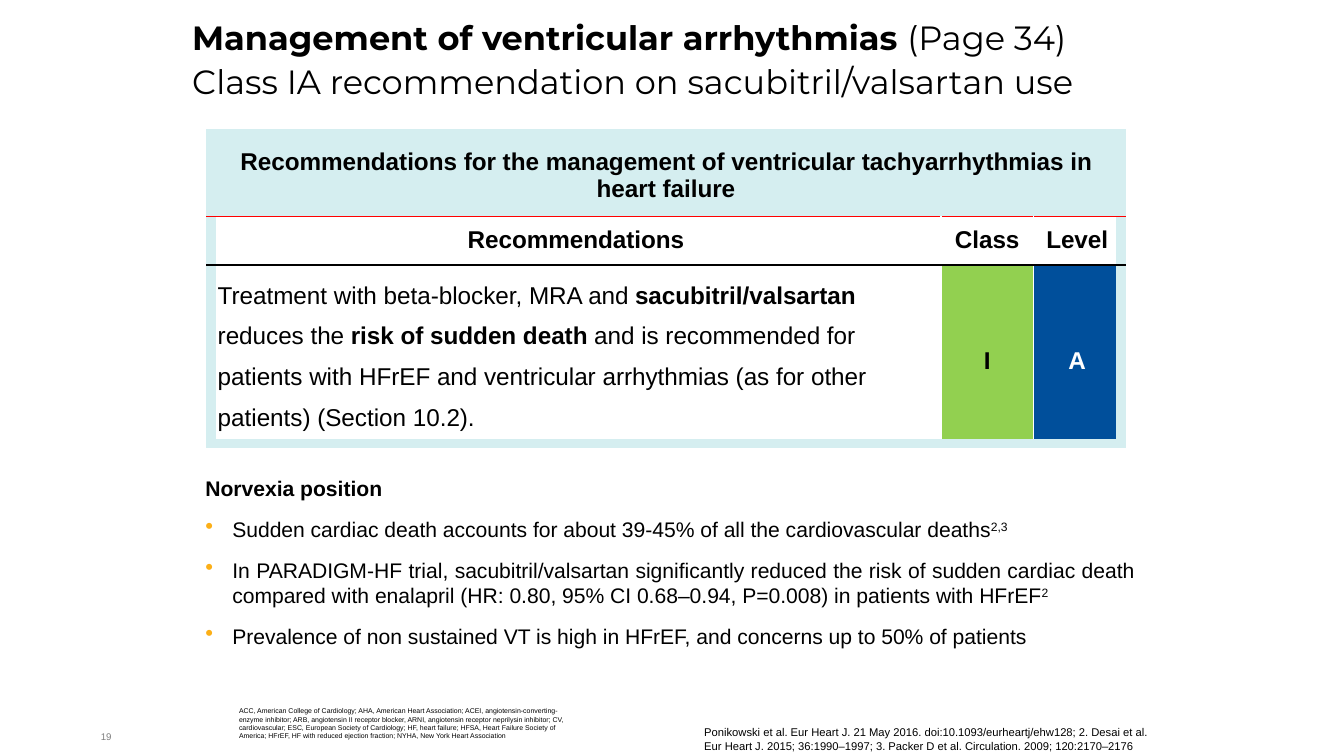
from lxml import etree
from pptx import Presentation, util as u
from pptx.dml.color import RGBColor
from pptx.enum import text
from pptx.oxml import ns

In, Pt = u.Inches, u.Pt
THEME = {
    "black": "000000", "white": "FFFFFF", "grey": "7F7F7F", "red": "FF0000",
    "frame": "D5EEF0", "class": "92D050", "level": "004F9B", "bullet": "FCAF17",
    "head": "Montserrat", "body": "Arial",
    "title_pt": 18, "table_pt": 13, "position_pt": 11.25,
    "source_pt": 6, "number_pt": 5.25, "abbreviation_pt": 3.75,
}
CENTER, LEFT = text.PP_ALIGN.CENTER, text.PP_ALIGN.LEFT
JUSTIFY, MIDDLE = text.PP_ALIGN.JUSTIFY, text.MSO_ANCHOR.MIDDLE


def write(paragraph, parts, size, color="black", font="body", **layout):
    """Add (text, style) parts; style is "", "b" for bold or "sup"."""
    for name, value in layout.items():
        setattr(paragraph, name, value)
    for words, style in parts:
        run = paragraph.add_run()
        run.text = words
        formats = {"name": THEME[font], "size": Pt(THEME[size]), "bold": style == "b"}
        for name, value in formats.items():
            setattr(run.font, name, value)
        run.font.color.rgb = RGBColor.from_string(THEME[color])
        if style == "sup":
            run.font._element.set("baseline", "30000")


def add_frame(shape, box, margins=(0, 0, 0, 0), **layout):
    """Place a text shape and return its text frame."""
    for name, value in zip(("left", "top", "width", "height"), box):
        setattr(shape, name, In(value))
    frame = shape.text_frame
    sides = ("margin_left", "margin_top", "margin_right", "margin_bottom")
    formats = dict(zip(sides, map(In, margins)), word_wrap=True,
                   auto_size=text.MSO_AUTO_SIZE.NONE, **layout)
    for name, value in formats.items():
        setattr(frame, name, value)
    return frame


# Slide in 16:9 format
prs = Presentation()
prs.slide_width, prs.slide_height = In(10), In(10 * 9 / 16)
slide = prs.slides.add_slide(prs.slide_layouts[5])

# Title
title = add_frame(slide.shapes.title, (1.43, 0.17, 6.81, 0.54),
                  (0, 0.05, 0, 0.05), vertical_anchor=MIDDLE)
title_lines = [
    [("Management of ventricular arrhythmias ", "b"), ("(Page 34)", "")],
    [("Class IA recommendation on sacubitril/valsartan use", "")],
]
for i, parts in enumerate(title_lines):
    line = title.add_paragraph() if i else title.paragraphs[0]
    write(line, parts, "title_pt", font="head", alignment=LEFT, space_before=Pt(2.2))

# Footnotes and slide number
footnotes = [
    ((1.68, 5.26, 2.59, 0.18), (0.1, 0, 0, 0), "abbreviation_pt", "black",
     "ACC, American College of Cardiology; AHA, American Heart Association; "
     "ACEI, angiotensin-converting-enzyme inhibitor; ARB, angiotensin II receptor blocker, "
     "ARNI, angiotensin receptor neprilysin inhibitor; CV, cardiovascular; "
     "ESC, European Society of Cardiology; HF, heart failure; "
     "HFSA, Heart Failure Society of America; HFrEF, HF with reduced ejection fraction; "
     "NYHA, New York Heart Association"),
    ((5.24, 5.4, 3.4, 0.19), (0, 0, 0, 0), "source_pt", "black",
     "Ponikowski et al. Eur Heart J. 21 May 2016. doi:10.1093/eurheartj/ehw128; "
     "2. Desai et al. Eur Heart J. 2015; 36:1990–1997; "
     "3. Packer D et al. Circulation. 2009; 120:2170–2176"),
    ((0.75, 5.44, 0.25, 0.19), (0, 0, 0, 0), "number_pt", "grey", "19"),
]
for box, margins, size, color, words in footnotes:
    note = add_frame(slide.shapes.add_textbox(0, 0, 0, 0), box, margins)
    write(note.paragraphs[0], [(words, "")], size, color)

# Recommendation table
columns, rows = (5.43, 0.69, 0.65), (0.61, 0.36, 1.33)
table = slide.shapes.add_table(3, 3, In(1.57), In(1), In(6.77), In(2.3)).table
table.first_row = table.horz_banding = False
for column, width in zip(table.columns, columns):
    column.width = In(width)
for row, height in zip(table.rows, rows):
    row.height = In(height)

recommendation = [
    ("Treatment with beta-blocker, MRA and ", ""), ("sacubitril/valsartan ", "b"),
    ("reduces the ", ""), ("risk of sudden death ", "b"),
    ("and is recommended for patients with HFrEF and ventricular arrhythmias "
     "(as for other patients) (Section 10.2).", ""),
]
heading = ("Recommendations for the management of ventricular tachyarrhythmias "
           "in heart failure")
content = [
    [[(heading, "b")], [], []],
    [[("Recommendations", "b")], [("Class", "b")], [("Level", "b")]],
    [recommendation, [("I", "b")], [("A", "b")]],
]
fills = [["frame"] * 3, [None] * 3, [None, "class", "level"]]
frame_line, divider = ("frame", 6), ("white", 1)
row_lines = [frame_line, ("red", 1), ("black", 1), frame_line]
column_lines = [frame_line, divider, divider, frame_line]

for r, row in enumerate(content):
    for c, parts in enumerate(row):
        cell = table.cell(r, c)
        is_body = (r, c) == (2, 0)
        formats = {"margin_left": In(0.05), "margin_right": In(0.05),
                   "margin_top": In(0.03), "margin_bottom": In(0.03),
                   "vertical_anchor": text.MSO_ANCHOR.TOP if is_body else MIDDLE}
        for name, value in formats.items():
            setattr(cell, name, value)
        write(cell.text_frame.paragraphs[0], parts, "table_pt",
              "white" if fills[r][c] == "level" else "black",
              alignment=LEFT if is_body else CENTER, line_spacing=1.5 if r == 2 else 1.0)
        if fills[r][c]:
            cell.fill.solid()
            cell.fill.fore_color.rgb = RGBColor.from_string(THEME[fills[r][c]])
        else:
            cell.fill.background()
        # Borders come before the fill in the cell properties
        borders = {"a:lnL": column_lines[c], "a:lnR": column_lines[c + 1],
                   "a:lnT": row_lines[r], "a:lnB": row_lines[r + 1]}
        if r == 0:
            borders["a:lnL"] = borders["a:lnR"] = frame_line
        for i, (tag, (color, width)) in enumerate(borders.items()):
            border = etree.Element(ns.qn(tag), w=str(Pt(width)))
            solid = etree.SubElement(border, ns.qn("a:solidFill"))
            etree.SubElement(solid, ns.qn("a:srgbClr"), val=THEME[color])
            cell._tc.get_or_add_tcPr().insert(i, border)
table.cell(0, 0).merge(table.cell(0, 2))

# Position statement with bullets
position = add_frame(slide.shapes.add_textbox(0, 0, 0, 0),
                     (1.43, 3.49, 7.11, 1.63), (0.1, 0.05, 0.1, 0.05))
statements = [
    [("Norvexia position", "b")],
    [("Sudden cardiac death accounts for about 39-45% of all the cardiovascular deaths", ""),
     ("2,3", "sup")],
    [("In PARADIGM-HF trial, sacubitril/valsartan significantly reduced the risk of sudden "
      "cardiac death compared with enalapril (HR: 0.80, 95% CI 0.68–0.94, P=0.008) "
      "in patients with HFrEF", ""), ("2", "sup")],
    [("Prevalence of non sustained VT is high in HFrEF, and concerns up to 50% of patients", "")],
]
for i, parts in enumerate(statements):
    statement = position.add_paragraph() if i else position.paragraphs[0]
    write(statement, parts, "position_pt", alignment=JUSTIFY, space_before=Pt(8.5 if i else 0))
    if i:
        props = statement._p.get_or_add_pPr()
        props.set("marL", str(In(0.2)))
        props.set("indent", str(In(-0.2)))
        bullet_color = etree.SubElement(props, ns.qn("a:buClr"))
        etree.SubElement(bullet_color, ns.qn("a:srgbClr"), val=THEME["bullet"])
        etree.SubElement(props, ns.qn("a:buSzPct"), val="110000")
        etree.SubElement(props, ns.qn("a:buChar"), char="•")

prs.save("out.pptx")
